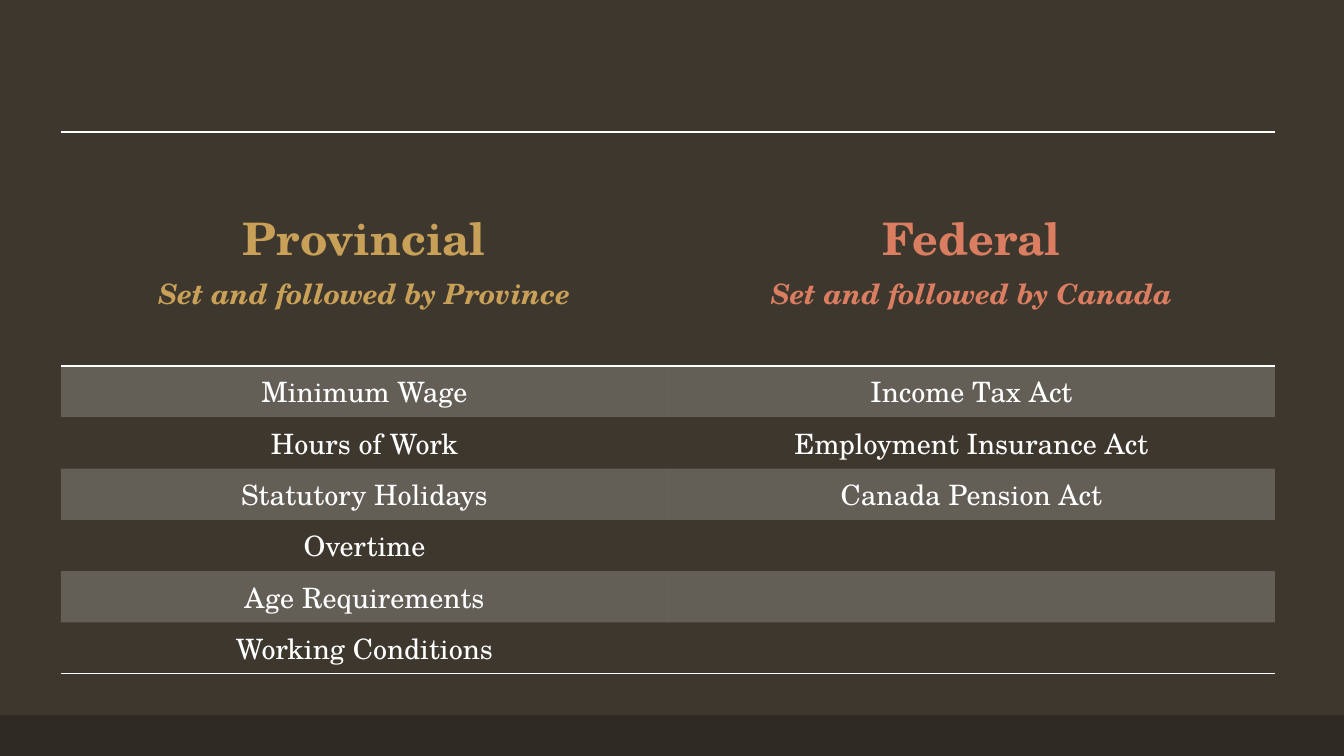
from lxml import etree
from pptx import Presentation
from pptx.dml.color import RGBColor
from pptx.enum.shapes import MSO_SHAPE
from pptx.enum.text import PP_ALIGN
from pptx.oxml.ns import qn
from pptx.util import Pt

RECT = MSO_SHAPE.RECTANGLE
CENTER = PP_ALIGN.CENTER
FONT = "TeX Gyre Schola"
WHITE = "FFFFFF"
PLAIN = "{2D5ABB26-0587-4C30-8999-92F81FD0307C}"  # table style without grid


def px(n):
    return round(n * 914400 / 100.8)


def paint(fill, color):
    fill.solid()
    fill.fore_color.rgb = RGBColor.from_string(color)


def write(para, text, size=20, color=WHITE, bold=False, italic=False):
    para.alignment = CENTER
    run = para.add_run()
    run.text = text
    font = run.font
    font.name, font.size = FONT, Pt(size)
    font.bold, font.italic = bold, italic
    paint(font.fill, color)


# Slide, background and bottom band
prs = Presentation()
prs.slide_width, prs.slide_height = px(1344), px(756)
slide = prs.slides.add_slide(prs.slide_layouts[6])
paint(slide.background.fill, "3D372E")
band = slide.shapes.add_shape(RECT, 0, px(715), px(1344), px(41))
band.shadow.inherit = False
band.line.fill.background()
paint(band.fill, "2E2923")

# Table frame
heads = [
    ("Provincial", "Set and followed by Province", "C9A057"),
    ("Federal", "Set and followed by Canada", "DA7D60"),
]
laws = [
    ("Minimum Wage", "Income Tax Act"),
    ("Hours of Work", "Employment Insurance Act"),
    ("Statutory Holidays", "Canada Pension Act"),
    ("Overtime", ""),
    ("Age Requirements", ""),
    ("Working Conditions", ""),
]
rows = len(laws) + 1
table = slide.shapes.add_table(
    rows, 2, px(61), px(132), px(1214), px(540)).table
table.first_row = table.horz_banding = False
table._tbl.tblPr.find(qn("a:tableStyleId")).text = PLAIN
for row in table.rows:
    row.height = px(51)
table.rows[0].height = px(234)

# Headings
for col, (name, note, color) in enumerate(heads):
    cell = table.cell(0, col)
    cell.margin_top = px(71)
    frame = cell.text_frame
    write(frame.paragraphs[0], name, size=32, color=color, bold=True)
    write(frame.add_paragraph(), note, color=color, bold=True, italic=True)

# Laws
for r, pair in enumerate(laws, 1):
    for col, law in enumerate(pair):
        if law:
            write(table.cell(r, col).text_frame.paragraphs[0], law)

# Bands on odd rows, rules around the headings and at the foot
rules = {0: ["a:lnT", "a:lnB"], rows - 1: ["a:lnB"]}
for r in range(rows):
    for col in range(2):
        cell = table.cell(r, col)
        props = cell._tc.get_or_add_tcPr()
        if r % 2:
            paint(cell.fill, WHITE)
            tint = props.find(".//" + qn("a:srgbClr"))
            etree.SubElement(tint, qn("a:alpha"), val="20000")
        else:
            cell.fill.background()
        for spot, tag in enumerate(rules.get(r, [])):
            line = etree.Element(qn(tag), w=str(Pt(1)))
            solid = etree.SubElement(line, qn("a:solidFill"))
            etree.SubElement(solid, qn("a:srgbClr"), val=WHITE)
            props.insert(spot, line)

prs.save("out.pptx")
